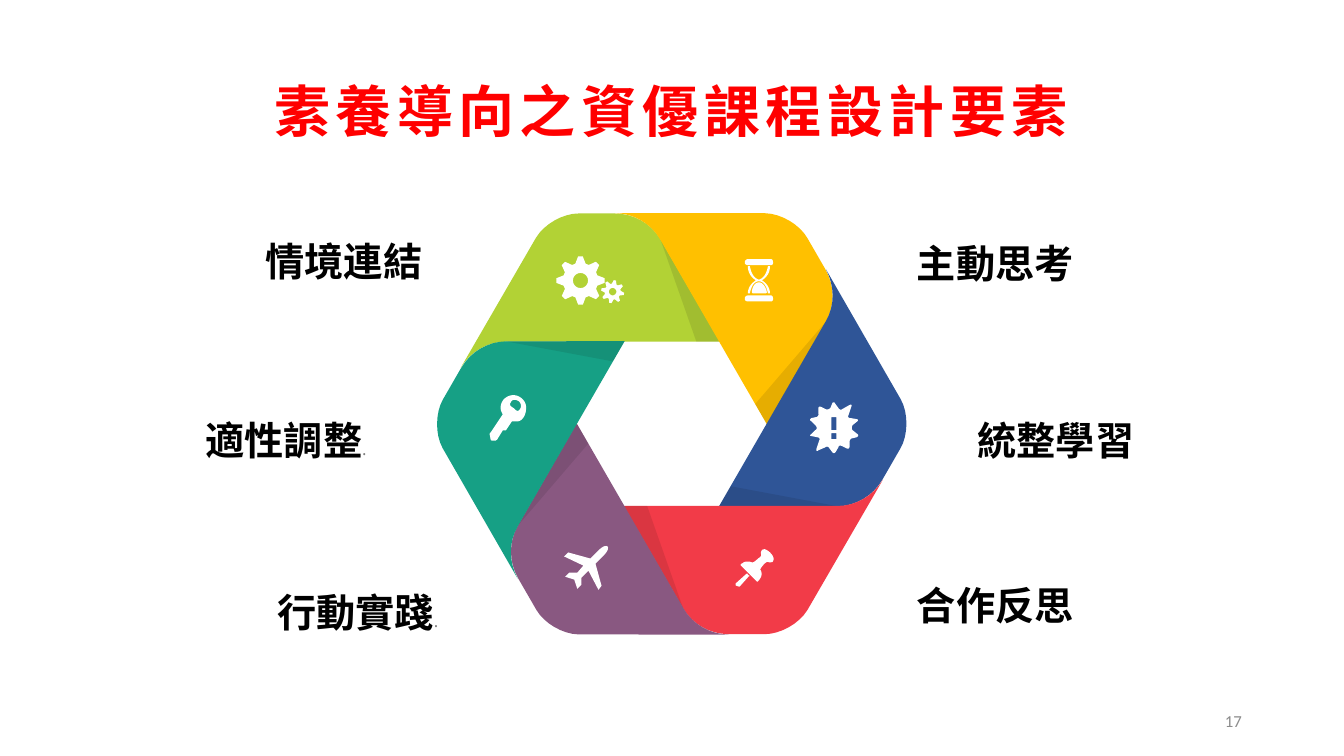
from dataclasses import dataclass
import math

from lxml import etree
from pptx import Presentation, util as u
from pptx.dml.color import RGBColor
from pptx.enum import text
from pptx.oxml.ns import qn


@dataclass(frozen=True)
class Theme:
    """Colours, fonts and type sizes of the slide."""
    title: str = "FF0000"
    label: str = "000000"
    dot: str = "808080"
    number: str = "8C8C8C"
    icon: str = "FFFFFF"
    shade: str = "0D0D0D"
    bands: tuple = ("B2D235", "FFC000", "2F5597", "F23B48", "895881", "16A085")
    cjk: str = "Noto Sans CJK SC"
    dot_font: str = "Open Sans"
    number_font: str = "Calibri"
    title_size: int = 40
    label_size: int = 28
    small_size: int = 12


THEME = Theme()
CENTRE = (16.93, 10.68)
ICON_UNIT = 0.0254
CURVE_STEPS = 8

BAND = ("M -.29 -4.66 C -.52 -5.04 -.95 -5.3 -1.44 -5.3 L -2.35 -5.3 "
        "C -2.73 -5.3 -3.21 -5.04 -3.42 -4.69 L -5.32 -1.41 "
        "C -5.07 -1.82 -4.64 -2.07 -4.18 -2.07 L 1.21 -2.07")
SHADE = "M -.29 -4.66 L .62 -2.07 1.21 -2.07"

KEY = ("M 36 10 C 35 4 28 -1 22 0 15 1 10 7 11 14 11 15 12 17 13 19 L 1 37 "
       "C 0 37 0 39 0 39 L 1 44 C 1 45 2 45 3 45 L 6 45 C 7 44 8 44 8 43 "
       "L 13 35 16 35 22 26 C 23 26 26 26 28 26 34 25 37 17 36 10 "
       "M 30 14 C 28 17 26 15 24 13 21 11 19 10 21 7 22 4 26 4 29 6 31 8 32 11 30 14")
PLANE = ("M 34 45 L 37 41 31 19 40 10 C 40 10 45 5 43 2 40 0 35 5 35 5 "
         "L 26 14 4 8 0 12 19 21 13 28 5 28 1 32 10 35 13 44 17 40 17 33 24 26")
PIN_NEEDLE = ("M 12 25 C 12 24 11 24 10 25 L 0 34 0 36 3 37 4 37 13 27 "
              "C 14 27 14 26 13 26")
PIN_HEAD = ("M 29 0 C 28 0 27 0 26 1 L 25 3 25 4 C 26 6 25 7 24 8 22 9 18 14 16 13 "
            "14 12 10 12 8 13 7 14 6 14 5 15 L 5 16 21 32 22 32 "
            "C 25 29 27 25 25 21 23 20 28 15 29 14 30 13 32 12 33 13 "
            "35 13 37 13 37 12 40 8 33 1 29 0")
HOURGLASS_CAP = ("M 3 0 L 26 0 C 27 0 28 1 28 3 L 28 4 C 28 5 27 6 26 6 "
                 "L 3 6 C 2 6 0 5 0 4 L 0 3 C 0 1 2 0 3 0")
HOURGLASS_SIDE = ("M 5 34 L 3 34 C 3 29 6 24 11 21 6 18 3 13 3 7 L 5 7 "
                  "C 6 12 8 18 13 20 14 20 14 21 14 21 14 22 14 22 13 22 8 23 6 29 5 34")
SAND = "M 8 34 L 21 34 22 33 C 21 28 18 23 14 23 10 23 7 28 7 33"
BADGE = ("M 47 32 L 42 28 C 41 27 41 25 42 23 L 47 19 C 48 18 47 17 46 17 L 40 16 "
         "C 38 16 37 15 38 13 L 41 4 C 41 3 41 2 39 3 L 32 7 C 31 8 29 8 28 6 L 25 2 "
         "C 24 0 23 0 22 1 L 20 6 C 19 7 17 8 15 7 L 11 5 C 9 4 8 5 8 7 L 8 11 "
         "C 9 13 7 15 6 15 L 1 16 C 0 17 -1 18 1 19 L 5 23 C 7 25 7 27 5 28 L 1 32 "
         "C -1 33 0 34 2 34 L 7 35 C 9 35 10 37 9 38 L 6 47 C 6 49 7 49 8 48 L 15 45 "
         "C 16 44 18 44 19 46 L 22 50 C 23 51 24 51 25 50 L 28 45 C 28 43 30 43 32 44 "
         "L 36 46 C 38 47 39 46 39 44 L 39 40 C 39 38 40 36 42 36 L 46 35 "
         "C 48 34 48 33 47 32 M 26 28 L 21 28 21 15 26 15 M 26 37 L 21 37 21 31 26 31")

LABELS = (
    ("主動思考", 23.11, 6.02, 6.55, False, False),
    ("統整學習", 24.64, 10.49, 6.65, False, False),
    ("合作反思", 23.11, 14.66, 6.55, False, False),
    ("情境連結", 4.19, 5.97, 6.45, True, False),
    ("適性調整", 2.92, 10.49, 6.32, True, True),
    ("行動實踐", 4.6, 14.83, 6.45, True, True),
)


def bezier(start, first, second, end):
    """Return points along a cubic curve, without its start."""
    points = []
    for step in range(1, CURVE_STEPS + 1):
        t = step / CURVE_STEPS
        weights = ((1 - t) ** 3, 3 * t * (1 - t) ** 2, 3 * t * t * (1 - t), t ** 3)
        points.append(tuple(sum(w * p[axis] for w, p in zip(weights, (start, first, second, end)))
                            for axis in (0, 1)))
    return points


def contours(outline):
    """Turn an outline of M, L and C commands into lists of points."""
    groups = []
    for token in outline.split():
        if token in "MLC":
            groups.append((token, []))
        else:
            groups[-1][1].append(float(token))
    result = []
    for command, numbers in groups:
        points = list(zip(numbers[::2], numbers[1::2]))
        if command == "M":
            result.append(points)
        elif command == "L":
            result[-1].extend(points)
        else:
            for i in range(0, len(points), 3):
                result[-1].extend(bezier(result[-1][-1], *points[i:i + 3]))
    return result


def ring(radii, turn=0):
    """Return points around the origin at evenly spaced angles."""
    step = math.tau / len(radii)
    return [(r * math.cos(i * step + turn), r * math.sin(i * step + turn))
            for i, r in enumerate(radii)]


def gear(outer, inner, hole, turn):
    """Return the contours of a gear with eight teeth and a round hole."""
    return [ring((outer, outer, inner, inner) * 8, turn), ring((hole,) * 24)]


def rotate(shape_contours, angle):
    """Turn contours clockwise around the origin."""
    c, s = math.cos(angle), math.sin(angle)
    return [[(c * x - s * y, s * x + c * y) for x, y in points] for points in shape_contours]


def add_outline(page, shape_contours, origin, color, unit=1, opacity=None):
    """Draw filled contours as one freeform."""
    placed = [[(u.Cm(origin[0] + x * unit), u.Cm(origin[1] + y * unit)) for x, y in points]
              for points in shape_contours]
    builder = page.shapes.build_freeform(*placed[0][0])
    builder.add_line_segments(placed[0][1:])
    for points in placed[1:]:
        builder.move_to(*points[0])
        builder.add_line_segments(points[1:])
    shape = builder.convert_to_shape()
    shape.shadow.inherit = False
    shape.line.fill.background()
    shape.fill.solid()
    shape.fill.fore_color.rgb = RGBColor.from_string(color)
    if opacity is not None:
        tint = shape.fill._xPr.find(".//" + qn("a:srgbClr"))
        etree.SubElement(tint, qn("a:alpha")).set("val", str(opacity * 1000))


def style(font, name, size, color, bold=False):
    """Set a font for Latin and East Asian text."""
    font.name, font.size, font.bold = name, u.Pt(size), bold
    font.color.rgb = RGBColor.from_string(color)
    latin = font._element.find(qn("a:latin"))
    latin.addnext(latin.makeelement(qn("a:ea"), {"typeface": name}))


def add_text(page, words, bounds, align, anchor=text.MSO_ANCHOR.MIDDLE):
    """Add a wrapped text box and return its frame and paragraph."""
    frame = page.shapes.add_textbox(*map(u.Cm, bounds)).text_frame
    frame.word_wrap = True
    frame.vertical_anchor = anchor
    para = frame.paragraphs[0]
    para.alignment = align
    para.add_run().text = words
    return frame, para


def add_label(page, words, left, top, width, right_aligned, dotted):
    """Add one element name beside the hexagon."""
    align = text.PP_ALIGN.RIGHT if right_aligned else text.PP_ALIGN.LEFT
    frame, para = add_text(page, words, (left, top, width, 1.19), align, text.MSO_ANCHOR.TOP)
    frame.margin_left = frame.margin_right = frame.margin_top = frame.margin_bottom = 0
    frame.auto_size = text.MSO_AUTO_SIZE.SHAPE_TO_FIT_TEXT
    style(para.font, THEME.cjk, THEME.label_size, THEME.label, True)
    if dotted:
        span = para.add_run()
        span.text = "."
        style(span.font, THEME.dot_font, THEME.small_size, THEME.dot)


def add_hexagon(page):
    """Draw the six folded bands by turning one band in steps of 60 degrees."""
    for i, color in enumerate(THEME.bands):
        angle = i * math.pi / 3
        add_outline(page, rotate(contours(BAND), angle), CENTRE, color)
        add_outline(page, rotate(contours(SHADE), angle), CENTRE, THEME.shade, opacity=10)


def add_icons(page):
    """Draw the white icons on the bands."""
    cap, side = contours(HOURGLASS_CAP), contours(HOURGLASS_SIDE)
    foot = [[(x, y + 36) for x, y in points] for points in cap]
    mirrored = [[(28 - x, y) for x, y in points] for points in side]
    icons = (
        (gear(24, 17.5, 7.5, -0.1), (14.63, 7.07)),
        (gear(11.5, 8, 3.7, 0.1), (15.44, 7.35)),
        (cap + foot + side + mirrored + contours(SAND), (18.77, 6.53)),
        (contours(BADGE), (20.42, 10.13)),
        (contours(PIN_NEEDLE), (18.54, 13.84)),
        (contours(PIN_HEAD), (18.54, 13.84)),
        (contours(PLANE), (14.22, 13.72)),
        (contours(KEY), (12.34, 9.96)),
    )
    for shape_contours, origin in icons:
        add_outline(page, shape_contours, origin, THEME.icon, ICON_UNIT)


def main():
    """Build the slide and save it."""
    deck = Presentation()
    deck.slide_width, deck.slide_height = u.Cm(33.87), u.Cm(19.05)
    page = deck.slides.add_slide(deck.slide_layouts[6])
    for label in LABELS:
        add_label(page, *label)
    _, title = add_text(page, "素養導向之資優課程設計要素", (4.22, 2.01, 25.4, 1.75), text.PP_ALIGN.CENTER)
    title.line_spacing = 0.9
    style(title.font, THEME.cjk, THEME.title_size, THEME.title, True)
    title.font._element.set("spc", "400")
    add_hexagon(page)
    add_icons(page)
    _, number = add_text(page, "17", (23.93, 17.65, 7.62, 1.02), text.PP_ALIGN.RIGHT)
    style(number.font, THEME.number_font, THEME.small_size, THEME.number)
    deck.save("out.pptx")


if __name__ == "__main__":
    main()
